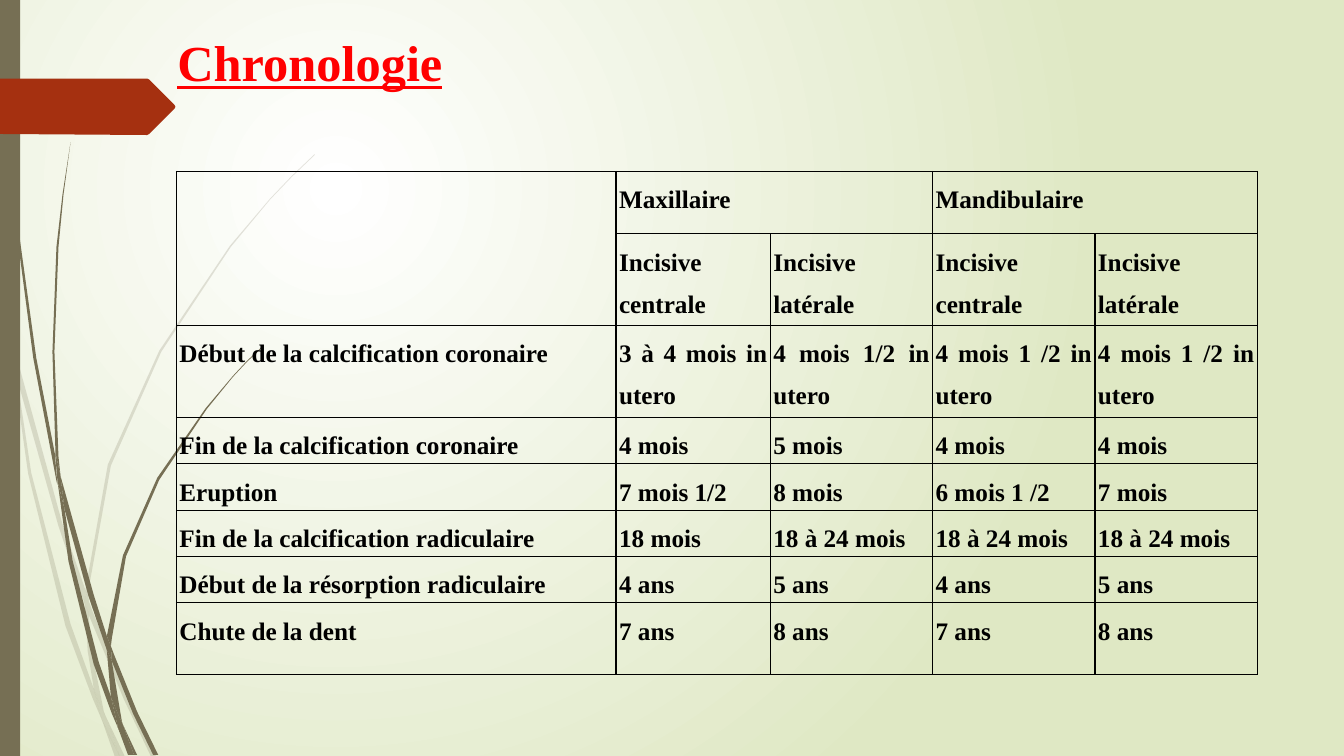
"""Build the Chronologie slide: tooth development dates in a table beside grass blades."""
from lxml.etree import SubElement
from pptx import Presentation
from pptx.dml.color import RGBColor
from pptx.enum.shapes import MSO_SHAPE
from pptx.enum.text import MSO_ANCHOR, PP_ALIGN
from pptx.oxml.ns import qn
from pptx.util import Inches, Pt

WHITE = RGBColor(0xFF, 0xFF, 0xFF)
PALE_GREEN = RGBColor(0xDF, 0xE8, 0xC4)
OLIVE = RGBColor(0x76, 0x6F, 0x54)
RUST = RGBColor(0xA5, 0x30, 0x10)
RED = RGBColor(0xFF, 0, 0)
BLACK = RGBColor(0, 0, 0)
FONT = "Times New Roman"

FADED_BLADES = [
    [(0.11, 3.5), (0.09, 3.22), (0, 2.82), (0, 2.99), (0.1, 3.44)],
    [(0.58, 5.22), (0.84, 5.99), (0.85, 5.86), (0.62, 5.2), (0.14, 3.45), (0.17, 3.76)],
    [(0.92, 6.07), (0.88, 5.96), (0.88, 6.1), (1.23, 6.94), (1.5, 7.51), (1.55, 7.51), (1.27, 6.92)],
    [(1.19, 7.51), (1.24, 7.51), (1.05, 7.11)],
    [(0.93, 6.83), (0.7, 6.19), (0.31, 4.69), (0.17, 3.76), (0.11, 3.5), (0.28, 4.7), (0.65, 6.21),
     (0.92, 6.93), (1.01, 7.14), (0.99, 7.07)],
    [(0.84, 5.99), (0.87, 6.46), (0.93, 6.83), (0.96, 6.92), (1.05, 7.11), (1.03, 7.06), (0.91, 6.46),
     (0.88, 6.1), (0.88, 6.08)],
    [(0.88, 5.84), (1.1, 4.62), (1.6, 3.49), (2.29, 2.45), (2.68, 1.98), (2.9, 1.75), (3.12, 1.54),
     (3.12, 1.53), (2.89, 1.75), (2.68, 1.97), (2.28, 2.44), (1.58, 3.48), (1.07, 4.61), (0.85, 5.84),
     (0.85, 5.86), (0.88, 5.96)],
    [(1.01, 7.14), (1.14, 7.51), (1.19, 7.51)],
    [(0.88, 6.08), (0.88, 6.1), (0.88, 5.96), (0.85, 5.86), (0.84, 5.99)],
    [(0.96, 6.92), (0.93, 6.83), (0.99, 7.07), (1.01, 7.14), (1.19, 7.51), (1.05, 7.11)],
]
SOLID_BLADES = [
    [(0.07, 1.1), (0.17, 2.33), (0.33, 3.55), (0.56, 4.77), (0.57, 4.81), (0.55, 4.57), (0.55, 4.53),
     (0.36, 3.55), (0.19, 2.32), (0.08, 1.09), (0.05, 0.48), (0.04, 0), (0.03, 0), (0.04, 0.48)],
    [(0.88, 5.92), (1.06, 6.45), (1.06, 6.31), (0.93, 5.9), (0.6, 4.72), (0.64, 5.05)],
    [(1.13, 6.49), (1.1, 6.41), (1.11, 6.56), (1.32, 7.08), (1.52, 7.49), (1.57, 7.49), (1.36, 7.06)],
    [(1.1, 6.91), (0.98, 6.57), (0.72, 5.56), (0.64, 5.05), (0.57, 4.77), (0.68, 5.57), (0.93, 6.59),
     (1.11, 7.08), (1.17, 7.22), (1.16, 7.17)],
    [(0.6, 4.72), (0.58, 4.53), (0.54, 3.49), (0.58, 2.45), (0.63, 1.93), (0.7, 1.41), (0.62, 1.93),
     (0.56, 2.45), (0.52, 3.49), (0.55, 4.49)],
    [(1.33, 7.49), (1.36, 7.49), (1.22, 7.19)],
    [(0.57, 4.77), (0.64, 5.05), (0.6, 4.72), (0.55, 4.49), (0.55, 4.53)],
    [(1.11, 6.33), (1.25, 5.52), (1.58, 4.76), (2.05, 4.06), (2.31, 3.74), (2.45, 3.59), (2.61, 3.44),
     (2.6, 3.44), (2.45, 3.58), (2.31, 3.73), (2.04, 4.05), (1.56, 4.74), (1.22, 5.51), (1.06, 6.31),
     (1.1, 6.41)],
    [(1.17, 7.22), (1.27, 7.49), (1.31, 7.49)],
    [(1.06, 6.45), (1.1, 6.91), (1.16, 7.06), (1.22, 7.19), (1.21, 7.16), (1.11, 6.56), (1.09, 6.51)],
    [(1.06, 6.45), (1.09, 6.51), (1.11, 6.56), (1.1, 6.41), (1.06, 6.31), (1.06, 6.33)],
    [(1.16, 7.06), (1.1, 6.91), (1.16, 7.17), (1.17, 7.22), (1.3, 7.49), (1.33, 7.49), (1.22, 7.19)],
]
ARROW = [(0, 0), (1.46, 0), (1.48, 0.01), (1.73, 0.26), (1.74, 0.28), (1.73, 0.3), (1.48, 0.55),
         (1.46, 0.56), (0, 0.55)]

COLUMN_WIDTHS = [4.36, 1.53, 1.61, 1.61, 1.61]
ROW_HEIGHTS = [0.62, 0.57, 0.57, 0.41, 0.4, 0.4, 0.4, 0.71]
DATES = [
    ["", "Maxillaire", "", "Mandibulaire", ""],
    [""] + ["Incisive centrale", "Incisive latérale"] * 2,
    ["Début de la calcification coronaire", "3 à 4 mois in utero", "4 mois 1/2 in utero",
     "4 mois 1 /2 in utero", "4 mois 1 /2 in utero"],
    ["Fin de la calcification coronaire", "4 mois", "5 mois", "4 mois", "4 mois"],
    ["Eruption", "7 mois 1/2", "8 mois", "6 mois 1 /2", "7 mois"],
    ["Fin de la calcification radiculaire", "18 mois", "18 à 24 mois", "18 à 24 mois", "18 à 24 mois"],
    ["Début de la résorption radiculaire", "4 ans", "5 ans", "4 ans", "5 ans"],
    ["Chute de la dent", "7 ans", "8 ans", "7 ans", "8 ans"],
]


def paint(shape, color):
    """Give a shape a plain fill without line or shadow."""
    shape.shadow.inherit = False
    shape.fill.solid()
    shape.fill.fore_color.rgb = color
    shape.line.fill.background()


def draw_outline(shapes, left, top, points, color):
    """Draw a closed outline whose points are inches from the left and top."""
    corners = [(Inches(x), Inches(y)) for x, y in points]
    builder = shapes.build_freeform(*corners[0])
    builder.add_line_segments(corners[1:], close=True)
    outline = builder.convert_to_shape(Inches(left), Inches(top))
    paint(outline, color)
    return outline


def draw_blades(slide, left, top, blades, opacity=100):
    """Draw a group of grass blades from the given corner."""
    tuft = slide.shapes.add_group_shape()
    for points in blades:
        blade = draw_outline(tuft.shapes, left, top, points, OLIVE)
        if opacity < 100:
            color = blade.fill._xPr.find(qn("a:solidFill"))[0]
            SubElement(color, qn("a:alpha"), val=str(opacity * 1000))


def draw_background(slide):
    """Fill the background with a glow around its upper left quarter."""
    fill = slide.background.fill
    fill.gradient()
    for stop, color in zip(fill.gradient_stops, (WHITE, PALE_GREEN)):
        stop.color.rgb = color
    gradient = slide._element.find(".//" + qn("a:gradFill"))
    gradient.remove(gradient.find(qn("a:lin")))
    glow = SubElement(gradient, qn("a:path"), path="circle")
    SubElement(glow, qn("a:fillToRect"), l="50000", t="50000", r="100000", b="100000")


def draw_side(slide, left, top, width, height):
    """Draw the grass, the side bar and the arrow at the left edge."""
    draw_blades(slide, left, top, FADED_BLADES, opacity=20)
    draw_blades(slide, left, top, SOLID_BLADES)
    bar = slide.shapes.add_shape(MSO_SHAPE.RECTANGLE, Inches(left), Inches(top), Inches(width), Inches(height))
    paint(bar, OLIVE)
    draw_outline(slide.shapes, left, top + 0.78, ARROW, RUST)


def draw_title(slide, left, top, width, height):
    """Write the underlined heading."""
    heading = slide.shapes.add_textbox(Inches(left), Inches(top), Inches(width), Inches(height)).text_frame
    heading.word_wrap = True
    heading.vertical_anchor = MSO_ANCHOR.TOP
    heading.margin_top = Inches(0.1)
    line = heading.paragraphs[0]
    line.text = "Chronologie"
    line.font.name = FONT
    line.font.size = Pt(36)
    line.font.bold = line.font.underline = True
    line.font.color.rgb = RED


def format_cell(cell, content):
    """Write one cell with black borders and no fill."""
    cell.margin_left = cell.margin_right = Inches(0.03)
    cell.margin_top, cell.margin_bottom = Inches(0.01), 0
    borders = cell._tc.get_or_add_tcPr()
    for side in ("a:lnL", "a:lnR", "a:lnT", "a:lnB"):
        border = SubElement(borders, qn(side), w=str(Pt(1)))
        SubElement(SubElement(border, qn("a:solidFill")), qn("a:srgbClr"), val=str(BLACK))
    cell.fill.background()
    entry = cell.text_frame.paragraphs[0]
    entry.text = content
    entry.alignment = PP_ALIGN.JUSTIFY
    entry.line_spacing = 1.5
    entry.space_after = Pt(10)
    entry.font.name = FONT
    entry.font.size = Pt(18)
    entry.font.bold = True
    entry.font.color.rgb = BLACK


def draw_dates(slide, left, top):
    """Draw the table of dates for each incisor."""
    dates = slide.shapes.add_table(
        len(ROW_HEIGHTS), len(COLUMN_WIDTHS), Inches(left), Inches(top),
        Inches(sum(COLUMN_WIDTHS)), Inches(sum(ROW_HEIGHTS))).table
    dates.first_row = dates.horz_banding = False
    for column, width in zip(dates.columns, COLUMN_WIDTHS):
        column.width = Inches(width)
    for row, height, contents in zip(dates.rows, ROW_HEIGHTS, DATES):
        row.height = Inches(height)
        for cell, content in zip(row.cells, contents):
            format_cell(cell, content)
    dates.cell(0, 0).merge(dates.cell(1, 0))
    for first in (1, 3):
        dates.cell(0, first).merge(dates.cell(0, first + 1))


def main():
    """Build and save the slide."""
    deck = Presentation()
    deck.slide_width, deck.slide_height = Inches(13.33), Inches(7.5)
    slide = deck.slides.add_slide(deck.slide_layouts[6])
    draw_background(slide)
    draw_side(slide, 0, 0, 0.2, 7.5)
    draw_title(slide, 1.66, 0.21, 9.75, 1.4)
    draw_dates(slide, 1.75, 1.7)
    deck.save("out.pptx")


if __name__ == "__main__":
    main()
